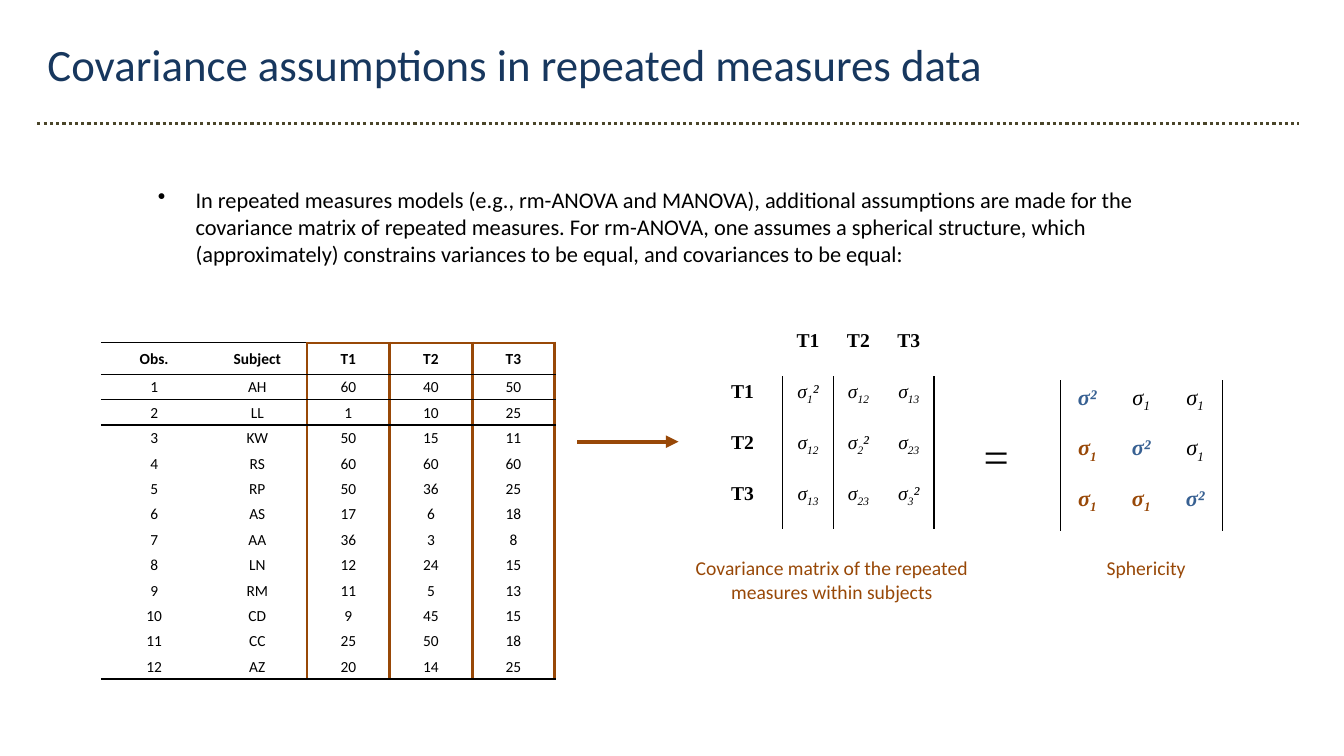
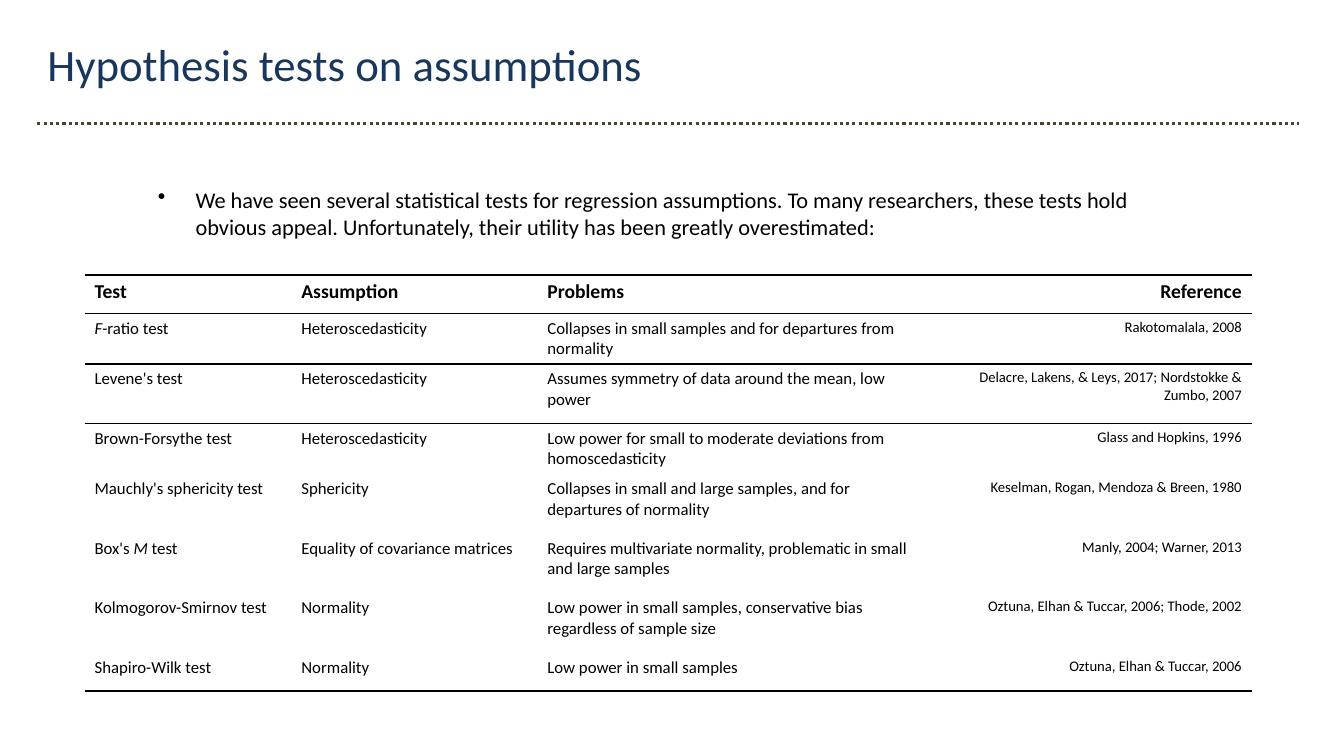
import pptx
import pptx.dml.color
import pptx.enum.dml
import pptx.enum.shapes
import pptx.enum.text
import pptx.oxml
import pptx.oxml.ns
import pptx.util

Cm = pptx.util.Cm
Pt = pptx.util.Pt
qn = pptx.oxml.ns.qn
ALIGN = pptx.enum.text.PP_ALIGN
ANCHOR = pptx.enum.text.MSO_ANCHOR

# Shared look
SANS, SERIF = "Calibri", "Times New Roman"
BLACK, NAVY, BLUE = "000000", "17375E", "376092"
RUST, OLIVE = "984807", "4A452A"
NO_STYLE = "{2D5ABB26-0587-4C30-8999-92F81FD0307C}"
BORDERS = ["a:lnL", "a:lnR", "a:lnT", "a:lnB"]

OBSERVATIONS = [
    ("Obs.", "Subject", "T1", "T2", "T3"),
    (1, "AH", 60, 40, 50),
    (2, "LL", 1, 10, 25),
    (3, "KW", 50, 15, 11),
    (4, "RS", 60, 60, 60),
    (5, "RP", 50, 36, 25),
    (6, "AS", 17, 6, 18),
    (7, "AA", 36, 3, 8),
    (8, "LN", 12, 24, 15),
    (9, "RM", 11, 5, 13),
    (10, "CD", 9, 45, 15),
    (11, "CC", 25, 50, 18),
    (12, "AZ", 20, 14, 25),
]

# Test names are split into runs; odd runs are italic
TESTS = [
    (["", "F", "-ratio test"], "Heteroscedasticity",
     "Collapses in small samples and for departures from normality",
     "Rakotomalala, 2008"),
    (["Levene's test"], "Heteroscedasticity",
     "Assumes symmetry of data around the mean, low power",
     "Delacre, Lakens, & Leys, 2017; Nordstokke & Zumbo, 2007"),
    (["Brown-Forsythe test"], "Heteroscedasticity",
     "Low power for small to moderate deviations from homoscedasticity",
     "Glass and Hopkins, 1996"),
    (["Mauchly's sphericity test"], "Sphericity",
     "Collapses in small and large samples, and for departures of normality",
     "Keselman, Rogan, Mendoza & Breen, 1980"),
    (["Box's ", "M", " test"], "Equality of covariance matrices",
     "Requires multivariate normality, problematic in small and large samples",
     "Manly, 2004; Warner, 2013"),
    (["Kolmogorov-Smirnov test"], "Normality",
     "Low power in small samples, conservative bias regardless of sample size",
     "Oztuna, Elhan & Tuccar, 2006; Thode, 2002"),
    (["Shapiro-Wilk test"], "Normality",
     "Low power in small samples",
     "Oztuna, Elhan & Tuccar, 2006"),
]


def rgb(color):
    return pptx.dml.color.RGBColor.from_string(color)


def add_run(p, text, size, color=BLACK, font=SANS, bold=False, italic=False, base=0):
    r = p.add_run()
    r.text = text
    r.font.size = Pt(size)
    r.font.name = font
    r.font.bold = bold
    r.font.italic = italic
    r.font.color.rgb = rgb(color)
    if base:
        r.font._element.set("baseline", str(base * 1000))


def add_text(s, box, text, size, color=BLACK, font=SANS, align=ALIGN.LEFT):
    tf = s.shapes.add_textbox(*[Cm(v) for v in box]).text_frame
    tf.word_wrap = True
    p = tf.paragraphs[0]
    p.alignment = align
    add_run(p, text, size, color, font)
    return p


def add_line(s, x1, x2, y, color, width):
    line = s.shapes.add_connector(pptx.enum.shapes.MSO_CONNECTOR.STRAIGHT,
                                  Cm(x1), Cm(y), Cm(x2), Cm(y))
    line.line.color.rgb = rgb(color)
    line.line.width = Pt(width)
    line._element.spPr.append(pptx.oxml.parse_xml(
        f'<a:effectLst {pptx.oxml.ns.nsdecls("a")}/>'))
    return line


# Tables
def add_table(s, x, y, widths, heights):
    frame = s.shapes.add_table(len(heights), len(widths), Cm(x), Cm(y),
                               Cm(sum(widths)), Cm(sum(heights)))
    table = frame.table
    table.first_row = table.horz_banding = False
    table._tbl.tblPr.find(qn("a:tableStyleId")).text = NO_STYLE
    for col, w in zip(table.columns, widths):
        col.width = Cm(w)
    for row, h in zip(table.rows, heights):
        row.height = Cm(h)
    for cell in table.iter_cells():
        cell.fill.background()
    return table


def set_border(cell, side, color, width):
    tcPr = cell._tc.get_or_add_tcPr()
    old = tcPr.find(qn(side))
    if old is not None:
        tcPr.remove(old)
    ln = pptx.oxml.parse_xml(
        f'<{side} {pptx.oxml.ns.nsdecls("a")} w="{Pt(width)}"><a:solidFill>'
        f'<a:srgbClr val="{color}"/></a:solidFill></{side}>')
    before = [qn(b) for b in BORDERS[:BORDERS.index(side)]]
    tcPr.insert(sum(e.tag in before for e in tcPr), ln)


def rule_across(table, edge, cols, color=BLACK, width=1):
    """Line on the row edge, set on the cells above and below it."""
    for c in cols:
        if edge > 0:
            set_border(table.cell(edge - 1, c), "a:lnB", color, width)
        if edge < len(table.rows):
            set_border(table.cell(edge, c), "a:lnT", color, width)


def rule_down(table, edge, rows, color=BLACK, width=1):
    """Line on the column edge, set on the cells at both sides of it."""
    for r in rows:
        if edge > 0:
            set_border(table.cell(r, edge - 1), "a:lnR", color, width)
        if edge < len(table.columns):
            set_border(table.cell(r, edge), "a:lnL", color, width)


def cell_par(table, r, c, align):
    p = table.cell(r, c).text_frame.paragraphs[0]
    p.alignment = align
    return p


# Parts on every slide
def base_slide(prs, title, bullet):
    s = prs.slides.add_slide(prs.slide_layouts[5])
    sp = s.shapes.title
    sp.left, sp.top, sp.width, sp.height = Cm(0.94), Cm(0.81), Cm(29.6), Cm(1.63)
    tf = sp.text_frame
    tf.vertical_anchor = ANCHOR.TOP
    tf.auto_size = pptx.enum.text.MSO_AUTO_SIZE.NONE
    tf.paragraphs[0].alignment = ALIGN.LEFT
    add_run(tf.paragraphs[0], title, 32, NAVY)

    line = add_line(s, 0.94, 32.74, 3.12, OLIVE, 2.25)
    line.line.dash_style = pptx.enum.dml.MSO_LINE.ROUND_DOT

    p = add_text(s, (3.73, 4.56, 26.4, 2.3), bullet, 16)
    pPr = p._p.get_or_add_pPr()
    pPr.set("marL", str(Cm(0.95)))
    pPr.set("indent", str(-Cm(0.95)))
    pPr.append(pptx.oxml.parse_xml(
        f'<a:buChar {pptx.oxml.ns.nsdecls("a")} char="•"/>'))
    return s


def observations_table(s, x, y):
    n = len(OBSERVATIONS)
    table = add_table(s, x, y, [2.69, 2.51] + [2.08] * 3, [0.79] + [0.64] * (n - 1))
    for r, values in enumerate(OBSERVATIONS):
        for c, value in enumerate(values):
            cell = table.cell(r, c)
            cell.margin_left = cell.margin_right = cell.margin_top = Cm(0.03)
            cell.margin_bottom = 0
            cell.vertical_anchor = ANCHOR.MIDDLE
            add_run(cell_par(table, r, c, ALIGN.CENTER), str(value), 11, bold=r == 0)
    for edge in (0, 1, 2, n):
        rule_across(table, edge, range(5))
    # Frame around the repeated measures
    rule_across(table, 0, range(2, 5), RUST, 2.25)
    for edge in (2, 3, 5):
        rule_down(table, edge, range(n), RUST, 2.25)


def add_sigma(p, sub, squared, size, **style):
    style = dict(font=SERIF, italic=True, **style)
    if not sub:
        add_run(p, "σ²", size, **style)
        return
    add_run(p, "σ", size, **style)
    add_run(p, sub, size, base=-25, **style)
    if squared:
        add_run(p, "²", size, **style)


def covariance_matrix(s, x, y):
    table = add_table(s, x, y, [2.03] + [1.27] * 3, [1.28] * 4)
    for i in range(1, 4):
        for r, c in ((0, i), (i, 0)):
            add_run(cell_par(table, r, c, ALIGN.CENTER), f"T{i}", 14,
                    font=SERIF, bold=True)
        for j in range(1, 4):
            sub = str(i) if i == j else f"{min(i, j)}{max(i, j)}"
            add_sigma(cell_par(table, i, j, ALIGN.CENTER), sub, i == j, 14)
    for edge in (1, 4):
        rule_down(table, edge, range(1, 4))


def sphericity_matrix(s, x, y):
    table = add_table(s, x, y, [1.36] * 3, [1.27] * 3)
    for i in range(3):
        for j in range(3):
            color = BLUE if i == j else RUST if j < i else BLACK
            add_sigma(cell_par(table, i, j, ALIGN.CENTER), "" if i == j else "1",
                      False, 16, color=color, bold=j <= i)
    for edge in (0, 3):
        rule_down(table, edge, range(3))


def matrix_equation(s, x, y):
    """Covariance matrix, equals sign and sphericity matrix with captions."""
    covariance_matrix(s, x + 1.14, y)
    add_text(s, (x + 7.98, y + 2.47, 1.4, 1.63), "=", 32, font=SERIF)
    sphericity_matrix(s, x + 10.16, y + 1.38)
    captions = [(0, "Covariance matrix of the repeated measures within subjects"),
                (7.92, "Sphericity")]
    for dx, text in captions:
        add_text(s, (x + dx, y + 5.69, 8.81, 1.45), text, 14, RUST, align=ALIGN.CENTER)


def tests_table(s, x, y):
    table = add_table(s, x, y, [5.21, 6.2, 10.01, 8],
                      [0.97, 1.27, 1.5, 1.27, 1.5, 1.5, 1.5, 0.97])
    aligns = [ALIGN.LEFT] * 3 + [ALIGN.RIGHT]
    for c, head in enumerate(["Test", "Assumption", "Problems", "Reference"]):
        add_run(cell_par(table, 0, c, aligns[c]), head, 14, bold=True)
    for r, (name, *details) in enumerate(TESTS, 1):
        p = cell_par(table, r, 0, ALIGN.LEFT)
        for k, part in enumerate(name):
            if part:
                add_run(p, part, 12, italic=k % 2 == 1)
        for c, text in enumerate(details, 1):
            add_run(cell_par(table, r, c, aligns[c]), text, 10.5 if c == 3 else 12)
    for edge in (0, 1, 2, len(TESTS) + 1):
        rule_across(table, edge, range(4))


def covariance_slide(prs):
    s = base_slide(
        prs, "Covariance assumptions in repeated measures data",
        "In repeated measures models (e.g., rm-ANOVA and MANOVA), additional "
        "assumptions are made for the covariance matrix of repeated measures. "
        "For rm-ANOVA, one assumes a spherical structure, which (approximately) "
        "constrains variances to be equal, and covariances to be equal:")
    observations_table(s, 2.54, 8.64)
    arrow = add_line(s, 14.55, 17.1, 11.13, RUST, 3)
    arrow.line._get_or_add_ln().append(pptx.oxml.parse_xml(
        f'<a:tailEnd {pptx.oxml.ns.nsdecls("a")} type="triangle"/>'))
    matrix_equation(s, 16.56, 8.2)


def tests_slide(prs):
    s = base_slide(
        prs, "Hypothesis tests on assumptions",
        "We have seen several statistical tests for regression assumptions. To many "
        "researchers, these tests hold obvious appeal. Unfortunately, their utility "
        "has been greatly overestimated:")
    tests_table(s, 2.13, 6.93)


def main():
    prs = pptx.Presentation()
    prs.slide_width, prs.slide_height = Cm(33.87), Cm(19.05)
    covariance_slide(prs)
    tests_slide(prs)
    prs.save("out.pptx")


if __name__ == "__main__":
    main()
